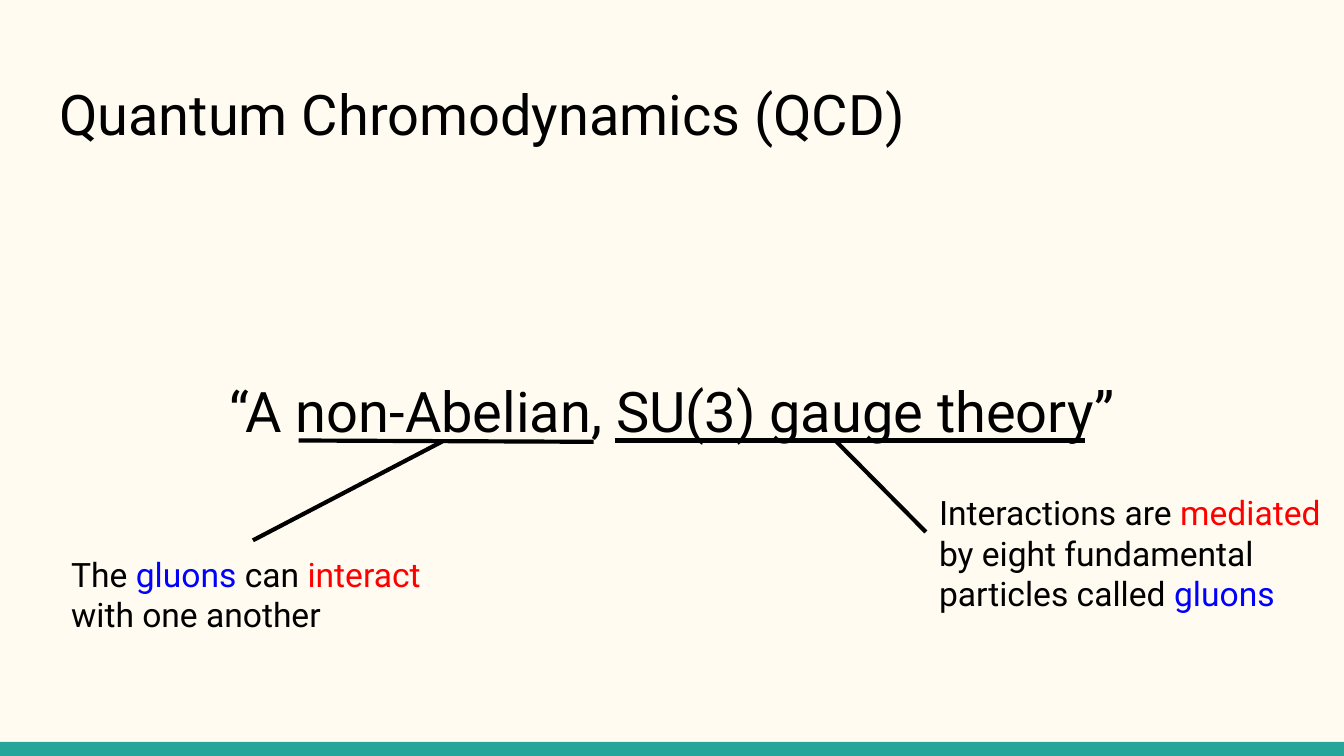
from pptx import Presentation
from pptx import util as u
from pptx.dml import color
from pptx.enum import shapes, text
from pptx.oxml import ns
from lxml import etree

FONT = "Roboto"
BLACK, RED, BLUE = "000000", "FF0000", "0000FF"
CREAM, TEAL = "FFFBF0", "26A69A"


def rgb(value):
    return color.RGBColor.from_string(value)


def place(shape, box):
    shape.left, shape.top, shape.width, shape.height = (u.Pt(n) for n in box)


def write(shape, runs, size=18, align=text.PP_ALIGN.LEFT, anchor=text.MSO_ANCHOR.TOP):
    frame = shape.text_frame
    frame.word_wrap = True
    frame.auto_size = text.MSO_AUTO_SIZE.NONE
    frame.vertical_anchor = anchor
    frame.margin_left = frame.margin_right = u.Pt(7.2)
    frame.margin_top = frame.margin_bottom = u.Pt(7.2)
    paragraph = frame.paragraphs[0]
    paragraph.alignment = align
    for words, tint in runs:
        run = paragraph.add_run()
        run.text = words
        run.font.name = FONT
        run.font.size = u.Pt(size)
        run.font.color.rgb = rgb(tint)


def add_text(slide, box, runs, **style):
    shape = slide.shapes.add_textbox(*(u.Pt(n) for n in box))
    write(shape, runs, **style)


def add_line(slide, start, end):
    line = slide.shapes.add_connector(
        shapes.MSO_CONNECTOR.STRAIGHT, *(u.Pt(n) for n in (*start, *end)))
    line.line.color.rgb = rgb(BLACK)
    line.line.width = u.Pt(2.25)
    etree.SubElement(line._element.spPr, ns.qn("a:effectLst"))


def add_footer_bar(slide, box):
    bar = slide.shapes.add_shape(
        shapes.MSO_SHAPE.RECTANGLE, *(u.Pt(n) for n in box))
    bar.shadow.inherit = False
    bar.fill.solid()
    bar.fill.fore_color.rgb = rgb(TEAL)
    bar.line.fill.background()


def add_title(slide, box):
    place(slide.shapes.title, box)
    write(slide.shapes.title, [("Quantum Chromodynamics (QCD)", BLACK)], size=30)


def add_quote(slide, box):
    left, top, width, height = box
    add_text(slide, box, [("“A non-Abelian, SU(3) gauge theory”", BLACK)],
             size=30, align=text.PP_ALIGN.CENTER, anchor=text.MSO_ANCHOR.MIDDLE)
    underline = top + 46
    add_line(slide, (left + 135.5, underline), (left + 293.5, underline + 0.7))
    add_line(slide, (left + 305, underline), (left + 556.5, underline))


def add_note(slide, box, runs, pointer_start, pointer_end):
    left, top = box[:2]
    add_text(slide, box, runs)
    add_line(slide, (left + pointer_start[0], top + pointer_start[1]),
             (left + pointer_end[0], top + pointer_end[1]))


def main():
    presentation = Presentation()
    presentation.slide_width, presentation.slide_height = u.Pt(720), u.Pt(405)
    slide = presentation.slides.add_slide(presentation.slide_layouts[5])
    slide.background.fill.solid()
    slide.background.fill.fore_color.rgb = rgb(CREAM)

    add_footer_bar(slide, (0, 397.5, 720, 7.5))
    add_title(slide, (24.5, 35.5, 671, 48))
    add_quote(slide, (24.5, 190, 671, 59))
    add_note(slide, (496, 256.5, 224, 77),
             [("Interactions are ", BLACK), ("mediated ", RED),
              ("by eight fundamental particles called ", BLACK), ("gluons", BLUE)],
             (-48, -20), (0, 28.5))
    add_note(slide, (31, 289.5, 209.5, 53.5),
             [("The ", BLACK), ("gluons ", BLUE), ("can ", BLACK),
              ("interact", RED), (" with one another", BLACK)],
             (206, -53), (104.5, 0))
    presentation.save("out.pptx")


if __name__ == "__main__":
    main()
